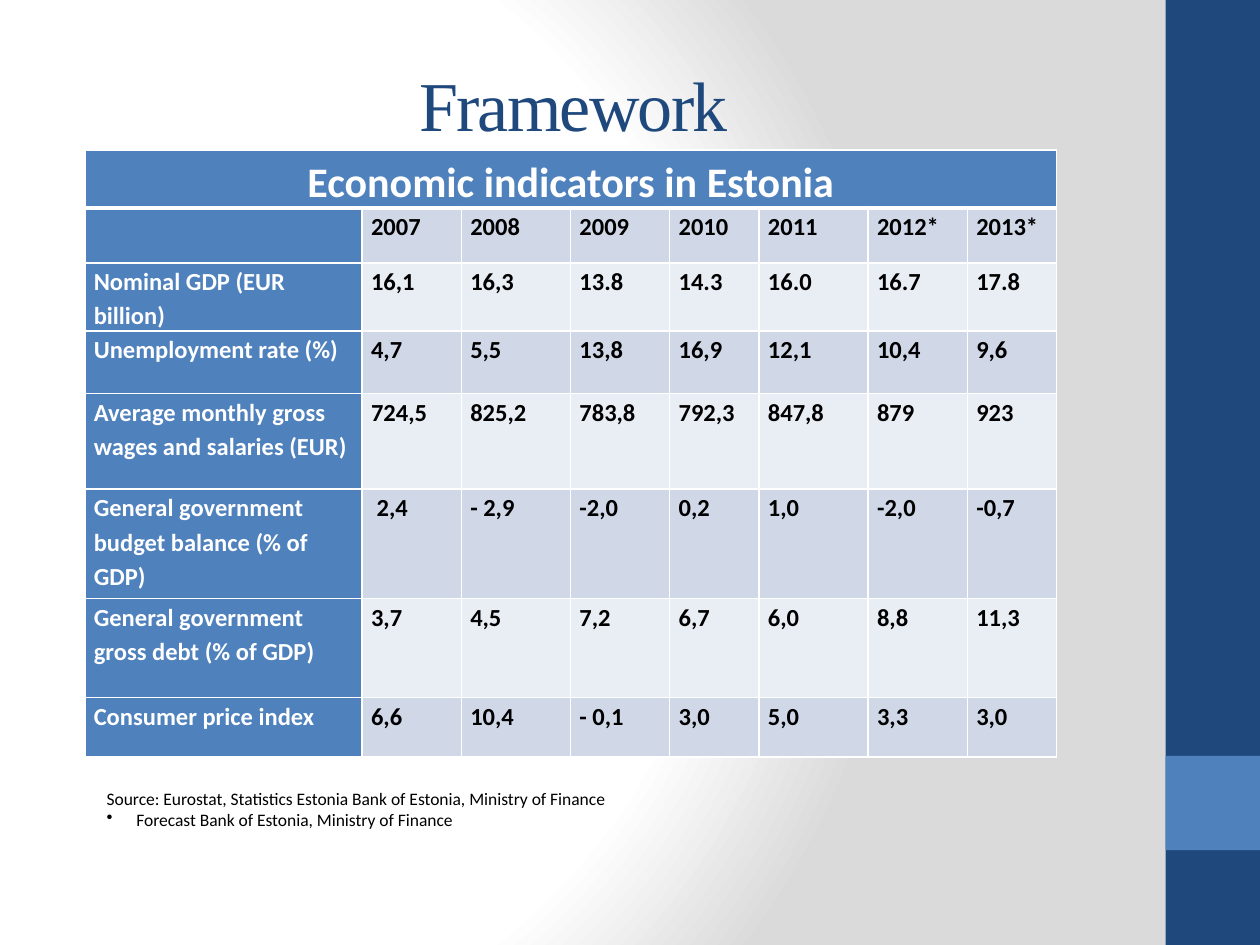
from dataclasses import dataclass

import pptx
import pptx.dml.color
import pptx.enum.shapes
import pptx.enum.text
import pptx.oxml
import pptx.oxml.ns
import pptx.util

Cm = pptx.util.Cm
Pt = pptx.util.Pt
ALIGN = pptx.enum.text.PP_ALIGN
ANCHOR = pptx.enum.text.MSO_ANCHOR
NS = pptx.oxml.ns.nsdecls("a", "p")


@dataclass(frozen=True)
class Theme:
    navy: str = "1F497D"
    blue: str = "4F81BD"
    band_dark: str = "D0D8E8"
    band_light: str = "E9EDF4"
    white: str = "FFFFFF"
    black: str = "000000"
    grey: str = "DADADA"
    title_font: str = "Times New Roman"
    body_font: str = "Calibri"
    title_size: int = 40
    header_size: int = 24
    cell_size: int = 14
    note_size: int = 10


@dataclass(frozen=True)
class Bar:
    top: float
    height: float
    color: str


@dataclass(frozen=True)
class Indicator:
    label: str
    values: tuple[str, ...]


THEME = Theme()
BARS = (Bar(0, 19.05, THEME.navy), Bar(15.24, 1.9, THEME.blue))
HEADING = "Economic indicators in Estonia"
INDICATORS = (
    Indicator("", ("2007", "2008", "2009", "2010", "2011", "2012*", "2013*")),
    Indicator("Nominal GDP (EUR billion)",
              ("16,1", "16,3", "13.8", "14.3", "16.0", "16.7", "17.8")),
    Indicator("Unemployment rate (%)",
              ("4,7", "5,5", "13,8", "16,9", "12,1", "10,4", "9,6")),
    Indicator("Average monthly gross wages and salaries (EUR)",
              ("724,5", "825,2", "783,8", "792,3", "847,8", "879", "923")),
    Indicator("General government budget balance (% of GDP)",
              (" 2,4", "- 2,9 ", "-2,0", "0,2", "1,0", "-2,0", "-0,7")),
    Indicator("General government gross debt (% of GDP)",
              ("3,7", "4,5", "7,2", "6,7", "6,0", "8,8", "11,3")),
    Indicator("Consumer price index",
              ("6,6", "10,4", "- 0,1", "3,0", "5,0", "3,3", "3,0")),
)
COL_WIDTHS = (5.59, 2, 2.2, 2, 1.8, 2.2, 2, 1.8)
ROW_HEIGHTS = (1.17, 1.11, 1.37, 1.26, 1.93, 2.2, 2, 1.2)


def rgb(color: str):
    return pptx.dml.color.RGBColor.from_string(color)


def write(p, text: str, *, size: int, color: str = THEME.black,
          font: str = THEME.body_font, bold: bool = False,
          align=ALIGN.LEFT, line_spacing: float = 1.0):
    """Put formatted text in a paragraph and return its run."""
    p.alignment = align
    p.line_spacing = line_spacing
    p.font.size = Pt(size)
    r = p.add_run()
    r.text = text
    r.font.size = Pt(size)
    r.font.name = font
    r.font.bold = bold
    r.font.color.rgb = rgb(color)
    return r


def set_background(s) -> None:
    stops = "".join(
        f'<a:gs pos="{pos}000"><a:srgbClr val="{color}"/></a:gs>'
        for pos, color in ((0, THEME.white), (75, THEME.white), (100, THEME.grey)))
    s._element.cSld.insert(0, pptx.oxml.parse_xml(
        f'<p:bg {NS}><p:bgPr><a:gradFill rotWithShape="1"><a:gsLst>{stops}</a:gsLst>'
        '<a:path path="circle"><a:fillToRect l="20000" t="50000" r="100000" b="50000"/>'
        '</a:path></a:gradFill><a:effectLst/></p:bgPr></p:bg>'))


def add_bar(s, bar: Bar) -> None:
    sp = s.shapes.add_shape(pptx.enum.shapes.MSO_SHAPE.RECTANGLE,
                            Cm(23.5), Cm(bar.top), Cm(1.9), Cm(bar.height))
    sp.shadow.inherit = False
    sp.fill.solid()
    sp.fill.fore_color.rgb = rgb(bar.color)
    sp.line.fill.background()


def set_borders(cell, top: int = 1, bottom: int = 1) -> None:
    tc_pr = cell._tc.get_or_add_tcPr()
    sides = (("lnL", 1), ("lnR", 1), ("lnT", top), ("lnB", bottom))
    for i, (side, width) in enumerate(sides):
        tc_pr.insert(i, pptx.oxml.parse_xml(
            f'<a:{side} {NS} w="{Pt(width)}"><a:solidFill>'
            f'<a:srgbClr val="{THEME.white}"/></a:solidFill></a:{side}>'))


def fill_cell(cell, text: str, fill: str, *, top: int = 1, bottom: int = 1,
              **fmt) -> None:
    cell.margin_left = cell.margin_right = Cm(0.18)
    cell.margin_top = cell.margin_bottom = 0
    cell.fill.solid()
    cell.fill.fore_color.rgb = rgb(fill)
    set_borders(cell, top, bottom)
    if text:
        write(cell.text_frame.paragraphs[0], text, bold=True, line_spacing=1.15, **fmt)


def add_indicator_table(s) -> None:
    table = s.shapes.add_table(len(ROW_HEIGHTS), len(COL_WIDTHS), Cm(1.71), Cm(3.02),
                               Cm(sum(COL_WIDTHS)), Cm(sum(ROW_HEIGHTS))).table
    for col, width in zip(table.columns, COL_WIDTHS):
        col.width = Cm(width)
    for row, height in zip(table.rows, ROW_HEIGHTS):
        row.height = Cm(height)

    # Heading across all columns
    table.cell(0, 0).merge(table.cell(0, len(COL_WIDTHS) - 1))
    for cell in table.rows[0].cells:
        fill_cell(cell, "" if cell.is_spanned else HEADING, THEME.blue, bottom=3,
                  size=THEME.header_size, color=THEME.white, align=ALIGN.CENTER)

    # Years and indicators, in alternating bands
    for i, item in enumerate(INDICATORS, start=1):
        top = 3 if i == 1 else 1
        band = THEME.band_dark if i % 2 else THEME.band_light
        fill_cell(table.cell(i, 0), item.label, THEME.blue, top=top,
                  size=THEME.cell_size, color=THEME.white)
        for j, value in enumerate(item.values, start=1):
            fill_cell(table.cell(i, j), value, band, top=top, size=THEME.cell_size)


def add_title(s) -> None:
    tf = s.shapes.add_textbox(Cm(0.69), Cm(0.76), Cm(21.74), Cm(3.18)).text_frame
    tf.word_wrap = True
    tf.vertical_anchor = ANCHOR.MIDDLE
    tf.margin_bottom = Cm(0.64)
    r = write(tf.paragraphs[0], "Framework", size=THEME.title_size, color=THEME.navy,
              font=THEME.title_font, align=ALIGN.CENTER)
    r.font._element.set("spc", "-100")


def add_source_note(s) -> None:
    tf = s.shapes.add_textbox(Cm(1.9), Cm(15.77), Cm(10.62), Cm(1.09)).text_frame
    tf.word_wrap = False
    tf.vertical_anchor = ANCHOR.MIDDLE
    write(tf.paragraphs[0],
          "Source: Eurostat, Statistics Estonia Bank of Estonia, Ministry of Finance",
          size=THEME.note_size)
    p = tf.add_paragraph()
    write(p, "Forecast Bank of Estonia, Ministry of Finance", size=THEME.note_size)
    p_pr = p._p.get_or_add_pPr()
    p_pr.set("marL", str(Cm(0.6)))
    p_pr.set("indent", str(-Cm(0.6)))
    bullet = pptx.oxml.parse_xml(f'<a:buChar {NS} char="•"/>')
    p_pr.insert_element_before(bullet, "a:tabLst", "a:defRPr", "a:extLst")


def main() -> None:
    prs = pptx.Presentation()
    prs.slide_width, prs.slide_height = Cm(25.4), Cm(19.05)
    s = prs.slides.add_slide(prs.slide_layouts[6])
    set_background(s)
    for bar in BARS:
        add_bar(s, bar)
    add_title(s)
    add_indicator_table(s)
    add_source_note(s)
    prs.save("out.pptx")


if __name__ == "__main__":
    main()
